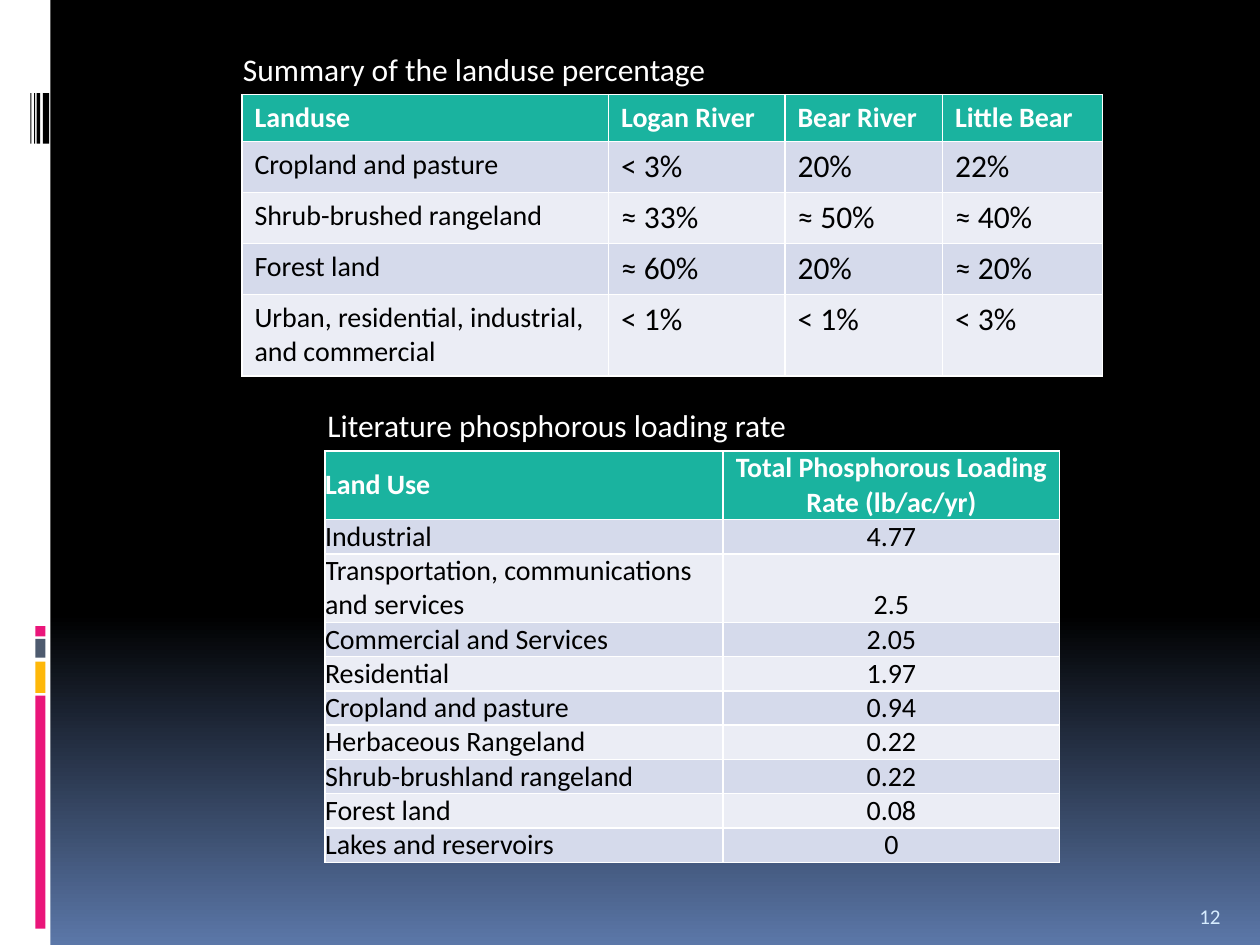
"""Build a slide with two tables on land use and phosphorous loading."""
from copy import deepcopy

from pptx import Presentation
from pptx.dml.color import RGBColor
from pptx.enum.shapes import MSO_SHAPE
from pptx.enum.text import MSO_ANCHOR, PP_ALIGN
from pptx.oxml.ns import qn
from pptx.util import Inches, Pt

FONT = "Calibri"
WHITE, BLACK, PINK = "FFFFFF", "000000", "EA157A"
HEADER, BANDS = "1AB39F", ("D5DAEB", "EBEDF5")

LAND_USE = [
    ("Landuse", "Logan River", "Bear River", "Little Bear"),
    ("Cropland and pasture", "< 3%", "20%", "22%"),
    ("Shrub-brushed rangeland", "≈ 33%", "≈ 50%", "≈ 40%"),
    ("Forest land", "≈ 60%", "20%", "≈ 20%"),
    ("Urban, residential, industrial, and commercial", "< 1%", "< 1%", "< 3%"),
]
LOADING = [
    ("Land Use", "Total Phosphorous Loading Rate (lb/ac/yr)"),
    ("Industrial", "4.77"),
    ("Transportation, communications and services", "2.5"),
    ("Commercial and Services", "2.05"),
    ("Residential", "1.97"),
    ("Cropland and pasture", "0.94"),
    ("Herbaceous Rangeland", "0.22"),
    ("Shrub-brushland rangeland", "0.22"),
    ("Forest land", "0.08"),
    ("Lakes and reservoirs", "0"),
]
COLOR_BARS = [(4.97, 0.08, PINK), (5.07, 0.15, "4E5B6F"),
              (5.25, 0.25, "FEB80A"), (5.52, 1.85, PINK)]
BARCODE = [(0.24, 0.01), (0.27, 0.01), (0.29, 0.03), (0.34, 0.05)]


def color(value):
    return RGBColor.from_string(value)


class SlideBuilder:
    """Hold the text style and the current slide."""

    def __init__(self, slide, font):
        self.slide = slide
        self.font = font

    def background(self, top, bottom, start):
        fill = self.slide.background.fill
        fill.gradient()
        fill.gradient_angle = 270
        first, last = fill.gradient_stops
        first.color.rgb, first.position = color(top), 0
        last.color.rgb, last.position = color(bottom), 1
        stop = self.slide.element.find(".//" + qn("a:gs"))
        middle = deepcopy(stop)
        middle.set("pos", str(start * 1000))
        stop.addnext(middle)

    def bar(self, left, top, width, height, fill):
        shape = self.slide.shapes.add_shape(
            MSO_SHAPE.RECTANGLE, Inches(left), Inches(top), Inches(width), Inches(height))
        shape.shadow.inherit = False
        shape.fill.solid()
        shape.fill.fore_color.rgb = color(fill)
        shape.line.fill.background()

    def set_text(self, frame, text, size, ink, bold=False):
        frame.text = text
        for para in frame.paragraphs:
            for span in para.runs:
                span.font.name = self.font
                span.font.size = Pt(size)
                span.font.bold = bold
                span.font.color.rgb = color(ink)

    def text(self, left, top, width, text, size=18, ink=WHITE, anchor=MSO_ANCHOR.TOP):
        box = self.slide.shapes.add_textbox(
            Inches(left), Inches(top), Inches(width), Inches(0.4))
        box.text_frame.word_wrap = True
        box.text_frame.vertical_anchor = anchor
        self.set_text(box.text_frame, text, size, ink)

    def table(self, left, top, widths, heights, rows, value_size=16, compact=False):
        table = self.slide.shapes.add_table(
            len(rows), len(widths), Inches(left), Inches(top),
            Inches(sum(widths)), Inches(sum(heights))).table
        for column, width in zip(table.columns, widths):
            column.width = Inches(width)
        for row, height in zip(table.rows, heights):
            row.height = Inches(height)
        for i, values in enumerate(rows):
            for j, value in enumerate(values):
                cell = table.cell(i, j)
                header = i == 0
                cell.fill.solid()
                cell.fill.fore_color.rgb = color(HEADER if header else BANDS[(i - 1) % 2])
                size = value_size if i and j else 16
                self.set_text(cell.text_frame, value, size, WHITE if header else BLACK, header)
                if compact:
                    cell.margin_left = cell.margin_right = 0
                    cell.margin_top = cell.margin_bottom = 0
                    cell.vertical_anchor = MSO_ANCHOR.MIDDLE if header else MSO_ANCHOR.BOTTOM
                    if j:
                        cell.text_frame.paragraphs[0].alignment = PP_ALIGN.CENTER


def main():
    deck = Presentation()
    deck.slide_width, deck.slide_height = Inches(10), Inches(7.5)
    page = SlideBuilder(deck.slides.add_slide(deck.slide_layouts[6]), FONT)

    page.background(BLACK, "5B77A8", 65)
    page.bar(0, 0, 0.4, 7.5, WHITE)
    for top, height, fill in COLOR_BARS:
        page.bar(0.28, top, 0.08, height, fill)
    for left, width in BARCODE:
        page.bar(left, 0.74, width, 0.4, BLACK)

    page.table(1.92, 0.75, [2.91, 1.4, 1.25, 1.27], [0.33] + [0.34] * 3 + [0.54],
               LAND_USE, value_size=18)
    page.table(2.58, 3.58, [3.16, 2.67], [0.42, 0.27, 0.42] + [0.27] * 7,
               LOADING, compact=True)
    page.text(1.83, 0.35, 5.25, "Summary of the landuse percentage")
    page.text(2.5, 3.17, 5.25, "Literature phosphorous loading rate")
    page.text(9.42, 7.02, 0.5, "12", size=12, ink="D6ECFF", anchor=MSO_ANCHOR.BOTTOM)
    deck.save("out.pptx")


if __name__ == "__main__":
    main()
